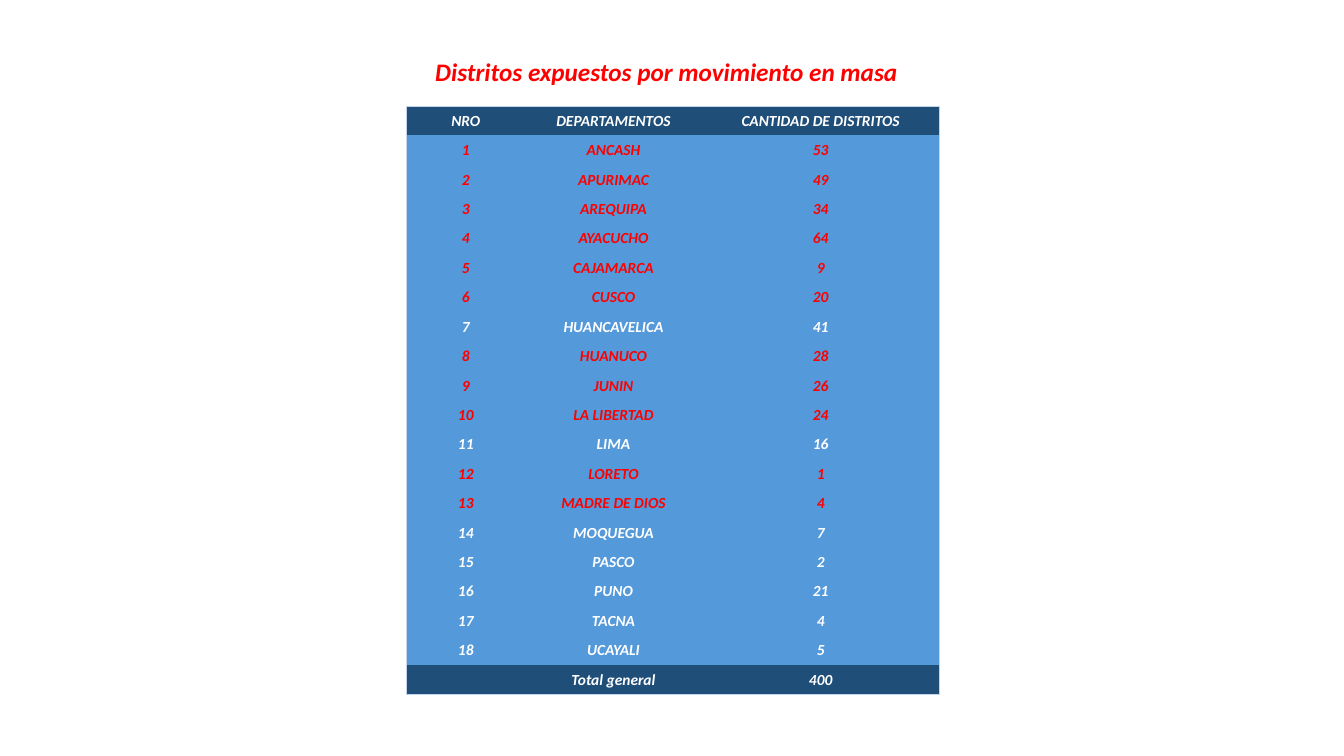
from lxml import etree
from pptx import Presentation
from pptx.dml import color
from pptx.enum import text
from pptx.oxml import ns
from pptx.util import Inches, Pt

RED, WHITE, NAVY, BLUE, BORDER = "FF0000", "FFFFFF", "1F4E79", "5499DA", "C4D5EB"
NO_STYLE = "{2D5ABB26-0587-4C30-8999-92F81FD0307C}"


def rgb(value):
    return color.RGBColor.from_string(value)


def style(paragraph, size, value):
    paragraph.alignment = text.PP_ALIGN.CENTER
    font = paragraph.font
    font.name, font.size, font.bold, font.italic = "Calibri", Pt(size), True, True
    font.color.rgb = rgb(value)


districts = [
    ("ANCASH", 53), ("APURIMAC", 49), ("AREQUIPA", 34), ("AYACUCHO", 64),
    ("CAJAMARCA", 9), ("CUSCO", 20), ("HUANCAVELICA", 41), ("HUANUCO", 28),
    ("JUNIN", 26), ("LA LIBERTAD", 24), ("LIMA", 16), ("LORETO", 1),
    ("MADRE DE DIOS", 4), ("MOQUEGUA", 7), ("PASCO", 2), ("PUNO", 21),
    ("TACNA", 4), ("UCAYALI", 5),
]
highlighted = {1, 2, 3, 4, 5, 6, 8, 9, 10, 12, 13}
rows = [("NRO", "DEPARTAMENTOS", "CANTIDAD DE DISTRITOS")]
rows += [(number, *district) for number, district in enumerate(districts, 1)]
rows.append(("", "Total general", 400))
last_row = len(rows) - 1

deck = Presentation()
deck.slide_width, deck.slide_height = Inches(13.33), Inches(7.5)
slide = deck.slides.add_slide(deck.slide_layouts[6])

title = slide.shapes.add_textbox(Inches(4.22), Inches(0.51), Inches(4.9), Inches(0.4)).text_frame
title.word_wrap = False
title.margin_left = 0
title.margin_right = Inches(0.12)
title.text = "Distritos expuestos por movimiento en masa"
style(title.paragraphs[0], 18, RED)

frame = slide.shapes.add_table(len(rows), 3, Inches(4.03), Inches(1.05), Inches(5.29), Inches(5.84))
table = frame.table
table._tbl.tblPr.find(ns.qn("a:tableStyleId")).text = NO_STYLE
table.horz_banding = False
for column, width in zip(table.columns, (1.18, 1.75, 2.36)):
    column.width = Inches(width)

for r, values in enumerate(rows):
    table.rows[r].height = Inches(5.84 / len(rows))
    for c, value in enumerate(values):
        cell = table.cell(r, c)
        cell.vertical_anchor = text.MSO_ANCHOR.MIDDLE
        cell.margin_left = cell.margin_top = cell.margin_right = Inches(0.01)
        cell.margin_bottom = 0
        cell.text = str(value)
        paragraph = cell.text_frame.paragraphs[0]
        style(paragraph, 11, RED if r in highlighted else WHITE)
        if value == "":
            etree.SubElement(paragraph._p, ns.qn("a:endParaRPr"), sz="1100")

        properties = cell._tc.get_or_add_tcPr()
        edges = (("lnL", c == 0), ("lnR", c == 2), ("lnT", r == 0), ("lnB", r == last_row))
        for edge, outer in edges:
            if outer:
                line = etree.SubElement(properties, ns.qn(f"a:{edge}"), w=str(Pt(0.5)))
                fill = etree.SubElement(line, ns.qn("a:solidFill"))
                etree.SubElement(fill, ns.qn("a:srgbClr"), val=BORDER)
        cell.fill.solid()
        cell.fill.fore_color.rgb = rgb(NAVY if r in (0, last_row) else BLUE)

deck.save("out.pptx")
